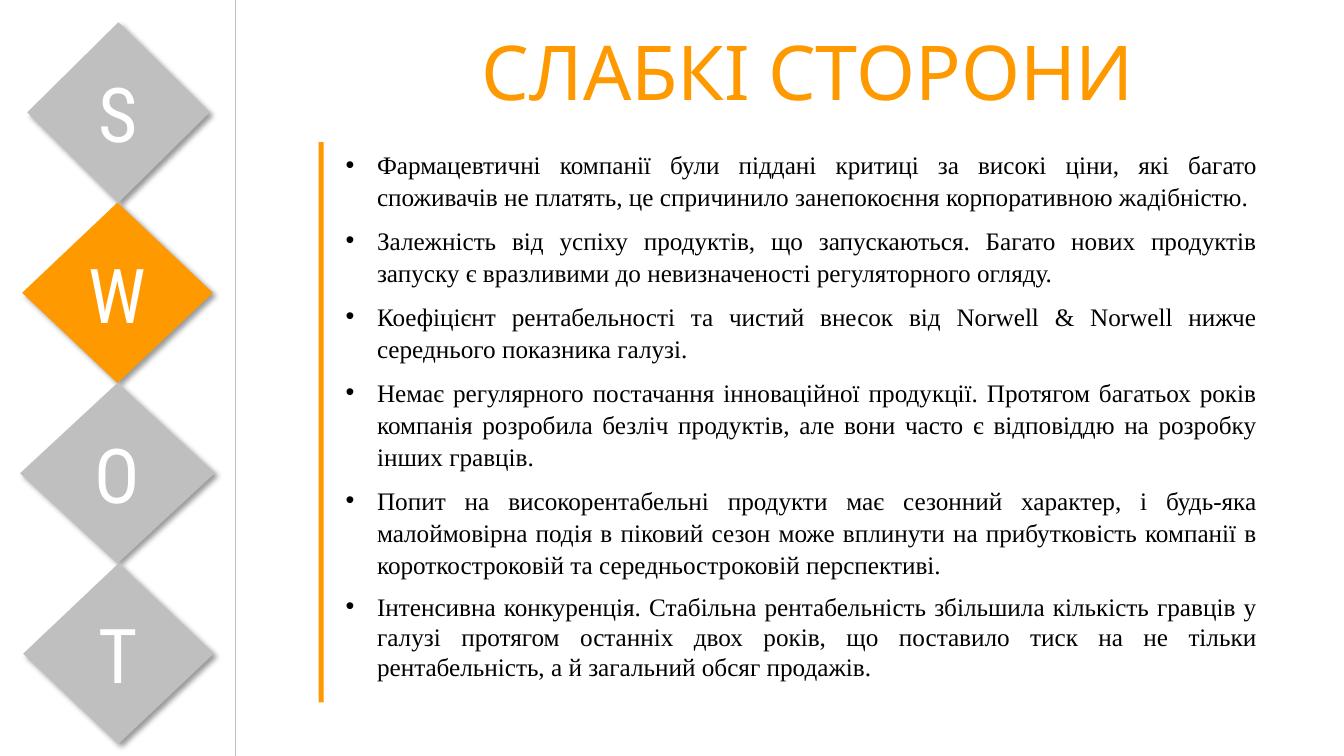
from lxml.etree import SubElement
from pptx import Presentation
from pptx.dml.color import RGBColor
from pptx.enum.shapes import MSO_CONNECTOR as CONN, MSO_SHAPE as SHAPE
from pptx.enum.text import MSO_ANCHOR as ANCHOR, PP_ALIGN as ALIGN
from pptx.oxml.ns import qn
from pptx.util import Pt

COLORS = {"accent": "FF9900", "muted": "BFBFBF", "white": "FFFFFF", "text": "000000", "shadow": "000000"}
SHADOW = {"blurRad": Pt(4), "dist": Pt(3), "dir": 45 * 60000, "algn": "tl", "rotWithShape": 0}


def rgb(name):
    return RGBColor.from_string(COLORS[name])


def style_font(font, size, face, color):
    for attribute, value in {"size": Pt(size), "name": face}.items():
        setattr(font, attribute, value)
    font.color.rgb = rgb(color)


deck = Presentation()
deck.slide_width, deck.slide_height = Pt(960), Pt(540)
slide = deck.slides.add_slide(deck.slide_layouts[5])
shapes = slide.shapes

# SWOT diamonds: letter, left, width, colour
DIAMOND_TOP, DIAMOND_HEIGHT = 15.84, 128.88
swot = [
    ("S", 19.44, 130.32, "muted"),
    ("W", 15.84, 136.08, "accent"),
    ("O", 14.4, 138.96, "muted"),
    ("T", 16.56, 136.08, "muted"),
]
for row, (letter, left, width, color) in enumerate(swot):
    diamond = shapes.add_shape(SHAPE.DIAMOND, Pt(left), Pt(DIAMOND_TOP + row * DIAMOND_HEIGHT),
                               Pt(width), Pt(DIAMOND_HEIGHT))
    diamond.fill.solid()
    diamond.fill.fore_color.rgb = rgb(color)
    diamond.line.fill.background()
    diamond.shadow.inherit = False
    effects = diamond.element.spPr.find(qn("a:effectLst"))
    outer = SubElement(effects, qn("a:outerShdw"), {key: str(value) for key, value in SHADOW.items()})
    shade = SubElement(outer, qn("a:srgbClr"), val=COLORS["shadow"])
    SubElement(shade, qn("a:alpha"), val="40000")
    diamond.text_frame.vertical_anchor = ANCHOR.MIDDLE
    caption = diamond.text_frame.paragraphs[0]
    caption.alignment = ALIGN.CENTER
    caption.text = letter
    style_font(caption.runs[0].font, 54, "Roboto Condensed", "white")

# Divider beside the diamonds
divider = shapes.add_connector(CONN.STRAIGHT, Pt(168), Pt(0), Pt(168), Pt(540))
divider.line.color.rgb = rgb("muted")
divider.line.width = Pt(0.5)
SubElement(divider.element.spPr, qn("a:effectLst"))

# Title
title = shapes.title
title.left, title.top, title.width, title.height = Pt(336.96), Pt(14.4), Pt(527.76), Pt(72.72)
title.text_frame.text = "СЛАБКІ СТОРОНИ"
title.text_frame.vertical_anchor = ANCHOR.TOP
heading = title.text_frame.paragraphs[0]
heading.alignment = ALIGN.LEFT
style_font(heading.runs[0].font, 54, "Karla", "accent")

# Accent bar
bar = shapes.add_shape(SHAPE.RECTANGLE, Pt(227.52), Pt(101.52), Pt(3.6), Pt(400.32))
bar.fill.solid()
bar.fill.fore_color.rgb = rgb("accent")
bar.line.fill.background()
bar.shadow.inherit = False

# Weaknesses
weaknesses = [
    "Фармацевтичні компанії були піддані критиці за високі ціни, які багато споживачів не платять, "
    "це спричинило занепокоєння корпоративною жадібністю.",
    "Залежність від успіху продуктів, що запускаються. Багато нових продуктів запуску є вразливими "
    "до невизначеності регуляторного огляду.",
    "Коефіцієнт рентабельності та чистий внесок від Norwell & Norwell нижче середнього показника галузі.",
    "Немає регулярного постачання інноваційної продукції. Протягом багатьох років компанія розробила "
    "безліч продуктів, але вони часто є відповіддю на розробку інших гравців.",
    "Попит на високорентабельні продукти має сезонний характер, і будь-яка малоймовірна подія в піковий "
    "сезон може вплинути на прибутковість компанії в короткостроковій та середньостроковій перспективі.",
    "Інтенсивна конкуренція. Стабільна рентабельність збільшила кількість гравців у галузі протягом "
    "останніх двох років, що поставило тиск на не тільки рентабельність, а й загальний обсяг продажів.",
]
body = shapes.add_textbox(Pt(239.76), Pt(101.52), Pt(665.28), Pt(416.16)).text_frame
body.word_wrap = True
for index, weakness in enumerate(weaknesses):
    item = body.add_paragraph() if index else body.paragraphs[0]
    item.text = weakness
    item.alignment = ALIGN.JUSTIFY
    if index < len(weaknesses) - 1:
        item.line_spacing = 1.07
        item.space_after = Pt(8)
    style_font(item.runs[0].font, 18, "Times New Roman", "text")
    bullet = item._p.get_or_add_pPr()
    bullet.set("marL", str(Pt(22.5)))
    bullet.set("indent", str(-Pt(22.5)))
    SubElement(bullet, qn("a:buFont"), typeface="Arial")
    SubElement(bullet, qn("a:buChar"), char="•")

deck.save("out.pptx")
